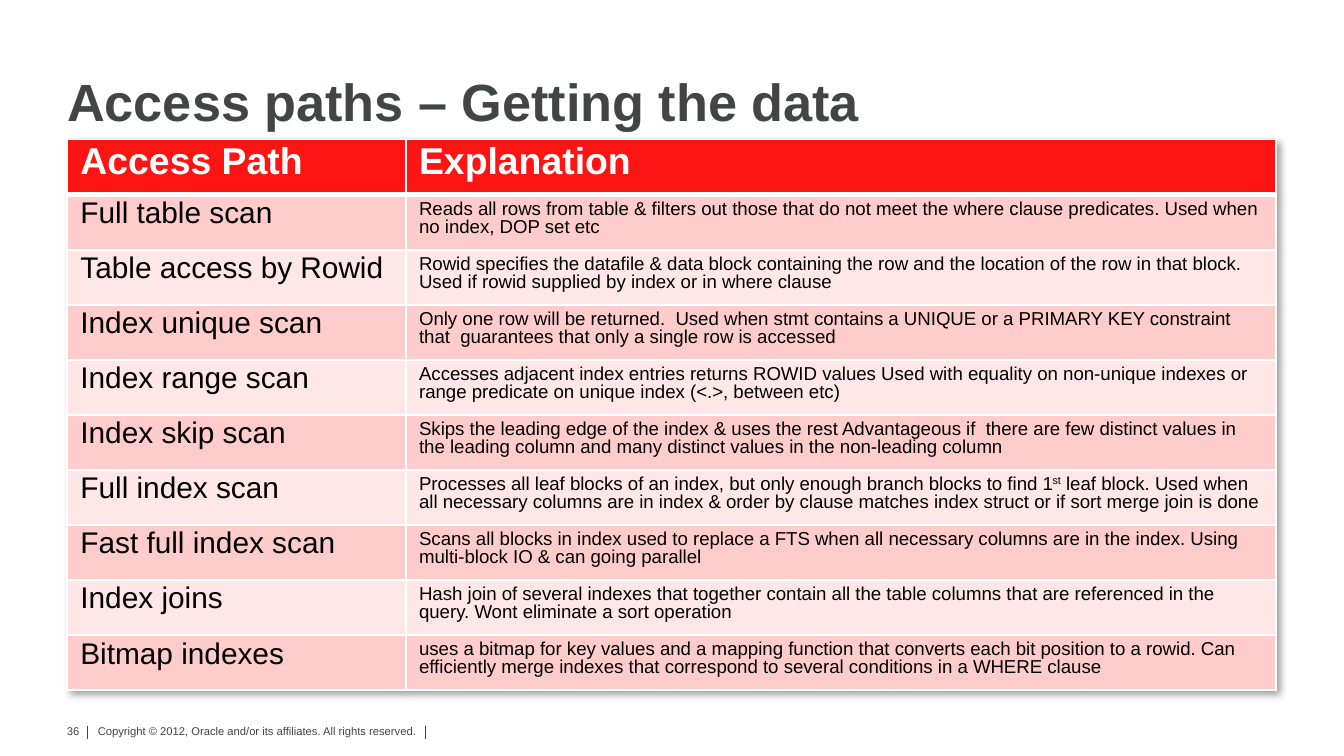
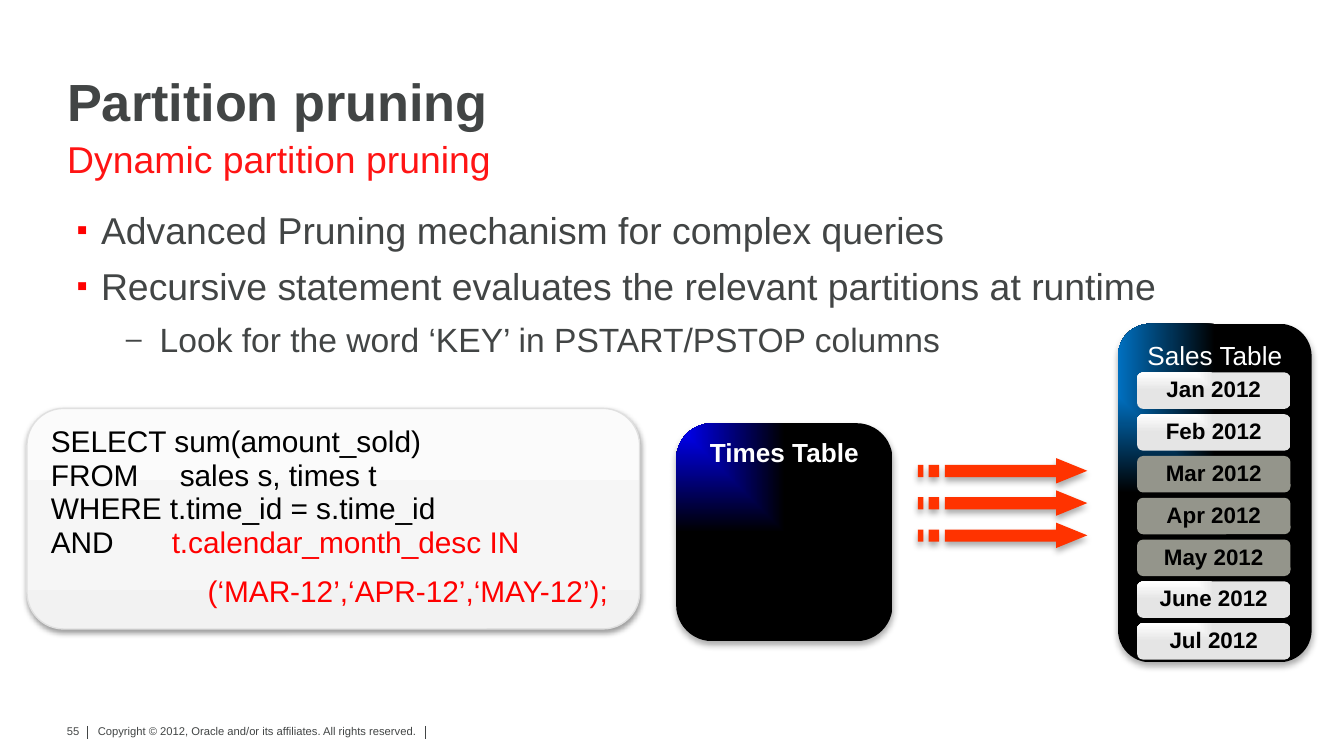
from lxml import etree
from pptx import Presentation
from pptx.dml.color import RGBColor
from pptx.enum.shapes import MSO_CONNECTOR, MSO_SHAPE
from pptx.enum.text import MSO_ANCHOR, MSO_AUTO_SIZE, PP_ALIGN
from pptx.oxml import parse_xml
from pptx.oxml.ns import nsdecls, qn
from pptx.util import Cm, Pt

ROUNDED = MSO_SHAPE.ROUNDED_RECTANGLE
STRAIGHT = MSO_CONNECTOR.STRAIGHT
TOP, MIDDLE, BOTTOM = MSO_ANCHOR.TOP, MSO_ANCHOR.MIDDLE, MSO_ANCHOR.BOTTOM
LEFT, CENTER, RIGHT = PP_ALIGN.LEFT, PP_ALIGN.CENTER, PP_ALIGN.RIGHT

FONT = "Arial"
GREY, RED, BRIGHT_RED = "424545", "FF1414", "FF0000"
BLACK, WHITE = "000000", "FFFFFF"
FROM_CORNER = '<a:path path="rect"><a:fillToRect r="100000" b="100000"/></a:path>'
UPWARD = '<a:lin ang="16200000" scaled="0"/>'

hex_color = RGBColor.from_string


def blend(shape, stops, direction):
    colors = "".join(
        f'<a:gs pos="{position * 1000}"><a:srgbClr val="{color}"/></a:gs>'
        for position, color in stops)
    shape._element.spPr.find(qn("a:prstGeom")).addnext(parse_xml(
        f'<a:gradFill {nsdecls("a")} rotWithShape="1"><a:gsLst>{colors}</a:gsLst>'
        f"{direction}</a:gradFill>"))


def cast_shadow(effects, opacity, blur, distance, angle=90):
    effects.append(parse_xml(
        f'<a:outerShdw {nsdecls("a")} blurRad="{Pt(blur)}" dist="{Pt(distance)}" '
        f'dir="{angle * 60000}" rotWithShape="0"><a:srgbClr val="{BLACK}">'
        f'<a:alpha val="{opacity * 1000}"/></a:srgbClr></a:outerShdw>'))


prs = Presentation()
prs.slide_width, prs.slide_height = Cm(25.4), Cm(14.29)

slides = []
for heading, page in (("Access paths – Getting the data", "36"), ("Partition pruning", "55")):
    slide = prs.slides.add_slide(prs.slide_layouts[5])
    slides.append(slide)

    title = slide.shapes.title
    title.left, title.top, title.width, title.height = Cm(1.27), Cm(1.35), Cm(22.86), Cm(1.17)
    frame = title.text_frame
    frame.margin_left = frame.margin_right = frame.margin_top = frame.margin_bottom = 0
    frame.auto_size = MSO_AUTO_SIZE.NONE
    frame.vertical_anchor = BOTTOM
    paragraph = frame.paragraphs[0]
    paragraph.text = heading
    paragraph.alignment = LEFT
    paragraph.line_spacing = 0.9
    paragraph.font.name, paragraph.font.size, paragraph.font.bold = FONT, Pt(28), True
    paragraph.font.color.rgb = hex_color(GREY)

    for text, left, top, width, height, margin, align in (
        ("Copyright © 2012, Oracle and/or its affiliates. All rights reserved.",
         1.75, 13.64, 6.96, 0.61, (0.1, 0.05), LEFT),
        (page, 0.99, 13.56, 0.76, 0.51, (0, 0.13), RIGHT),
    ):
        frame = slide.shapes.add_textbox(Cm(left), Cm(top), Cm(width), Cm(height)).text_frame
        frame.word_wrap = True
        frame.margin_left, frame.margin_top = Cm(margin[0]), Cm(margin[1])
        frame.margin_bottom = Cm(margin[1])
        paragraph = frame.paragraphs[0]
        paragraph.text = text
        paragraph.alignment = align
        paragraph.font.name, paragraph.font.size = FONT, Pt(6)
        paragraph.font.color.rgb = hex_color(GREY)

    for x in (1.65, 8.04):
        divider = slide.shapes.add_connector(STRAIGHT, Cm(x), Cm(13.72), Cm(x), Cm(13.97))
        divider.line.color.rgb = hex_color(GREY)
        divider.line.width = Pt(0.5)
        etree.SubElement(divider._element.spPr, qn("a:effectLst"))

access_slide, pruning_slide = slides

access_paths = [
    ("Access Path", ["Explanation"]),
    ("Full table scan", ["Reads all rows from table & filters out those that do not meet the "
                         "where clause predicates. Used when no index, DOP set etc"]),
    ("Table access by Rowid", ["Rowid specifies the datafile & data block containing the row and "
                               "the location of the row in that block.  Used if rowid supplied by "
                               "index or in where clause"]),
    ("Index unique scan", ["Only one row will be returned.  Used when stmt contains a UNIQUE or a "
                           "PRIMARY KEY constraint that  guarantees that only a single row is "
                           "accessed"]),
    ("Index range scan", ["Accesses adjacent index entries returns ROWID values Used with equality "
                          "on non-unique indexes or range predicate on unique index "
                          "(<.>, between etc)"]),
    ("Index skip scan", ["Skips the leading edge of the index & uses the rest Advantageous if  "
                         "there are few distinct values in the leading column and many distinct "
                         "values in the non-leading column"]),
    ("Full index scan", ["Processes all leaf blocks of an index, but only enough branch blocks to "
                         "find 1", "st", " leaf block. Used when all necessary columns are in "
                         "index & order by clause matches index struct or if sort merge join is "
                         "done"]),
    ("Fast full index scan", ["Scans all blocks in index used to replace a FTS when all necessary "
                              "columns are in the index. Using multi-block IO & can going "
                              "parallel"]),
    ("Index joins", ["Hash join of several indexes that together contain all the table columns "
                     "that are referenced in the query. Wont eliminate a sort operation"]),
    ("Bitmap indexes", ["uses a bitmap for key values and a mapping function that converts each "
                        "bit position to a rowid. Can efficiently merge indexes that correspond "
                        "to several conditions in a WHERE clause"]),
]
table = access_slide.shapes.add_table(
    len(access_paths), 2, Cm(1.27), Cm(2.64), Cm(22.84), Cm(10.4)).table
table.columns[0].width, table.columns[1].width = Cm(6.4), Cm(16.44)
table.horz_banding = False
table_effects = parse_xml(f'<a:effectLst {nsdecls("a")}/>')
cast_shadow(table_effects, 40, 4, 3, 45)
table._tbl.tblPr.insert(0, table_effects)

for row, (name, explanation) in enumerate(access_paths):
    table.rows[row].height = Cm(1.04)
    is_header = row == 0
    for column, pieces in enumerate(([name], explanation)):
        cell = table.cell(row, column)
        cell.margin_left = cell.margin_right = Cm(0.25)
        cell.margin_top = cell.margin_bottom = Cm(0.1)
        properties = cell._tc.get_or_add_tcPr()
        for side in ("lnL", "lnR", "lnT", "lnB"):
            thick = (is_header and side == "lnB") or (row == 1 and side == "lnT")
            properties.append(parse_xml(
                f'<a:{side} {nsdecls("a")} w="{Pt(3 if thick else 1)}"><a:solidFill>'
                f'<a:srgbClr val="{WHITE}"/></a:solidFill></a:{side}>'))
        cell.fill.solid()
        cell.fill.fore_color.rgb = hex_color(
            RED if is_header else "FFCCCC" if row % 2 else "FFE7E7")
        paragraph = cell.text_frame.paragraphs[0]
        paragraph.alignment = LEFT
        paragraph.line_spacing = 0.9
        paragraph.font.name, paragraph.font.bold = FONT, is_header
        paragraph.font.size = Pt(20 if is_header else (16, 10)[column])
        paragraph.font.color.rgb = hex_color(WHITE if is_header else BLACK)
        for piece in pieces:
            run = paragraph.add_run()
            run.text = piece
            if piece == "st":
                run._r.get_or_add_rPr().set("baseline", "30000")

bullet_points = [
    ("Advanced Pruning mechanism for complex queries", 0),
    ("Recursive statement evaluates the relevant partitions at runtime", 0),
    ("Look for the word ‘KEY’ in PSTART/PSTOP columns", 1),
]
for top, height, color, lines in (
    (2.57, 0.84, RED, [("Dynamic partition pruning", None)]),
    (3.91, 8.51, GREY, bullet_points),
):
    frame = pruning_slide.shapes.add_textbox(
        Cm(1.27), Cm(top), Cm(22.86), Cm(height)).text_frame
    frame.word_wrap = True
    frame.margin_left = frame.margin_right = frame.margin_top = frame.margin_bottom = 0
    for index, (text, level) in enumerate(lines):
        paragraph = frame.paragraphs[0] if index == 0 else frame.add_paragraph()
        paragraph.text = text
        if level is not None:
            paragraph.level = level
            paragraph.space_after = Pt(6)
            indents = paragraph._p.get_or_add_pPr()
            indents.set("marL", str(Cm((0.64, 1.75)[level])))
            indents.set("indent", str(-Cm((0.46, 0.64)[level])))
            if level == 0:
                indents.append(parse_xml(
                    f'<a:buClr {nsdecls("a")}><a:srgbClr val="{BRIGHT_RED}"/></a:buClr>'))
            etree.SubElement(indents, qn("a:buSzPct"), val="85000")
            etree.SubElement(indents, qn("a:buFont"), typeface=FONT)
            etree.SubElement(indents, qn("a:buChar"), char="▪–"[level])
        paragraph.font.name, paragraph.font.size = FONT, Pt(18 if level else 20)
        paragraph.font.color.rgb = hex_color(color)

query = pruning_slide.shapes.add_shape(ROUNDED, Cm(0.51), Cm(7.72), Cm(11.58), Cm(4.17))
blend(query, [(0, "F2F2F2"), (35, "F6F6F6"), (100, "FBFBFB")], UPWARD)
query.line.color.rgb = hex_color("E0E0E0")
query.line.width = Pt(0.75)
query.shadow.inherit = False
cast_shadow(query._element.spPr.find(qn("a:effectLst")), 38, 3.1, 1.6)
frame = query.text_frame
frame.vertical_anchor = TOP
select = frame.paragraphs[0]
select.text = ("SELECT sum(amount_sold)\vFROM     sales s, times t\v"
               "WHERE t.time_id = s.time_id \vAND       ")
month_filter = select.add_run()
month_filter.text = "t.calendar_month_desc IN"
month_filter.font.color.rgb = hex_color(BRIGHT_RED)
months_listed = frame.add_paragraph()
months_listed.text = "                   (‘MAR-12’,‘APR-12’,‘MAY-12’);"
months_listed.space_before = Pt(8)
for paragraph, color in ((select, BLACK), (months_listed, BRIGHT_RED)):
    paragraph.alignment = LEFT
    paragraph.line_spacing = 0.94
    paragraph.font.name, paragraph.font.size = FONT, Pt(16)
    paragraph.font.color.rgb = hex_color(color)

boxes = [
    ("Sales Table", 21.13, 6.12, 3.66, 6.4, "0070C0", False),
    ("Times Table", 12.78, 8, 4.09, 4.12, "0000FF", True),
]
months = ["Jan", "Feb", "Mar", "Apr", "May", "June", "Jul"]
boxes += [(f"{month} 2012", 21.49, 7.04 + 0.79 * index, 2.9, 0.69,
           "94958B" if month in ("Mar", "Apr", "May") else WHITE, True)
          for index, month in enumerate(months)]
for text, left, top, width, height, color, bold in boxes:
    box = pruning_slide.shapes.add_shape(ROUNDED, Cm(left), Cm(top), Cm(width), Cm(height))
    is_table = text.endswith("Table")
    if color == "94958B":
        box.fill.solid()
        box.fill.fore_color.rgb = hex_color(color)
    else:
        blend(box, [(0, color), (100, BLACK if is_table else "E5E5E5")], FROM_CORNER)
    box.line.fill.background()
    box.shadow.inherit = False
    frame = box.text_frame
    if is_table:
        cast_shadow(box._element.spPr.find(qn("a:effectLst")), 32, 3.5, 2.2)
    else:
        frame.margin_top = frame.margin_bottom = 0
    frame.vertical_anchor = TOP if is_table else MIDDLE
    paragraph = frame.paragraphs[0]
    paragraph.text = text
    paragraph.alignment = CENTER
    paragraph.line_spacing = 0.9 if bold else 1.0
    paragraph.font.name, paragraph.font.bold = FONT, bold
    paragraph.font.size = Pt(14 if is_table else 12)
    paragraph.font.color.rgb = hex_color(WHITE if is_table else BLACK)

for top in (866, 927, 988):
    upper, lower = top + 13, top + 36
    outline = pruning_slide.shapes.build_freeform(1996, top, scale=Cm(0.01))
    outline.add_line_segments([(1996, upper), (1786, upper), (1786, lower), (1996, lower),
                               (1996, top + 48), (2055, top + 24)], close=True)
    for start, end in ((1755, 1775), (1735, 1745)):
        outline.move_to(start, upper)
        outline.add_line_segments([(start, lower), (end, lower), (end, upper)], close=True)
    arrow = outline.convert_to_shape()
    arrow.fill.solid()
    arrow.fill.fore_color.rgb = hex_color("FF3300")
    arrow.line.fill.background()
    arrow.shadow.inherit = False
    cast_shadow(arrow._element.spPr.find(qn("a:effectLst")), 32, 3.5, 2.2)

prs.save("out.pptx")
